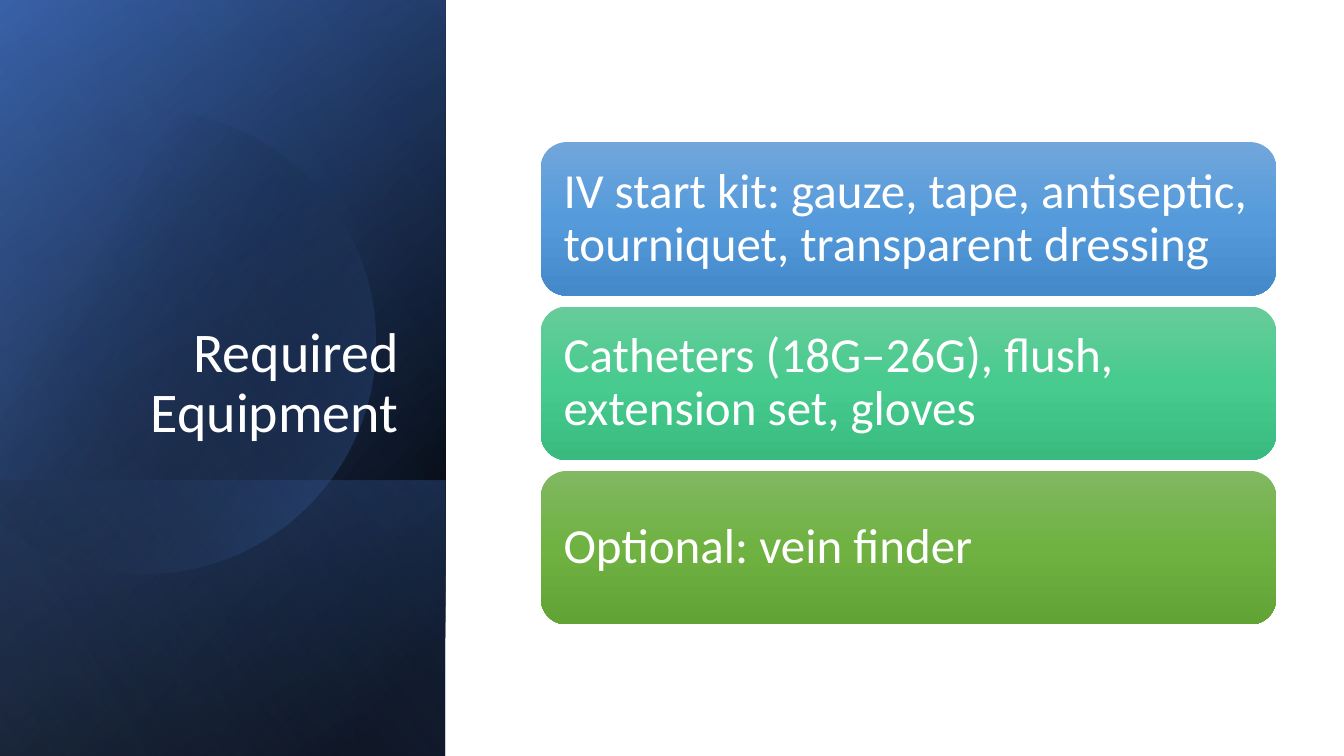
import math

import pptx
import pptx.dml.color
import pptx.enum.shapes
import pptx.enum.text
import pptx.oxml
import pptx.oxml.ns
import pptx.util

WIDTH, HEIGHT = 13.33, 7.5
FONT = "Calibri"
WHITE = "FFFFFF"
PANEL_SHARE = 0.3315  # of the slide's width

# Top share, height share, gradient angle, stops of (position, colour, opacity)
PANEL_LAYERS = [
    (0, 1, 50, [(8, "000000", 100), (100, "2F5597", 100)]),
    (0, 1, 30, [(0, "000000", 0), (99, "4472C4", 46)]),
    (0.635, 0.365, 130, [(2, "4472C4", 29), (100, "000000", 30)]),
]
DISC_STOPS = [(29, "000000", 0), (100, "4472C4", 43)]
SHEEN = (0, 1, 120, [(0, "000000", 0), (99, "8FAADC", 11)])

CARDS = [
    ("IV start kit: gauze, tape, antiseptic, tourniquet, transparent dressing",
     ["71A6DB", "559BDB", "448ACA"]),
    ("Catheters (18G–26G), flush, extension set, gloves",
     ["67CC9A", "47CB8E", "39BB7F"]),
    ("Optional: vein finder", ["81B861", "6FB242", "62A336"]),
]
CARD_LEFT, CARD_TOP = 0.4025, 0.188
CARD_WIDTH, CARD_HEIGHT, CARD_PITCH = 0.547, 0.203, 0.2175


def across(share):
    return pptx.util.Inches(WIDTH * share)


def down(share):
    return pptx.util.Inches(HEIGHT * share)


def colour(hex_string):
    return pptx.dml.color.RGBColor.from_string(hex_string)


def fill_gradient(shape, angle, stops):
    """Replace the fill with a linear gradient whose stops carry opacity."""
    stop_xml = "".join(
        f'<a:gs pos="{position * 1000}"><a:srgbClr val="{tint}">'
        f'<a:alpha val="{opacity * 1000}"/></a:srgbClr></a:gs>'
        for position, tint, opacity in stops)
    gradient = pptx.oxml.parse_xml(
        f'<a:gradFill {pptx.oxml.ns.nsdecls("a")} rotWithShape="1">'
        f'<a:gsLst>{stop_xml}</a:gsLst>'
        f'<a:lin ang="{angle * 60000}" scaled="0"/></a:gradFill>')
    shape.fill.solid()
    solid = shape.fill._xPr.find(pptx.oxml.ns.qn("a:solidFill"))
    solid.getparent().replace(solid, gradient)
    shape.line.fill.background()
    shape.shadow.inherit = False


def add_panel(page, top, height, angle, stops):
    """Add a quarter-turned, mirrored rectangle that covers the left panel."""
    long_side, short_side = down(height), across(PANEL_SHARE)
    middle_x, middle_y = short_side // 2, down(top + height / 2)
    panel = page.shapes.add_shape(
        pptx.enum.shapes.MSO_SHAPE.RECTANGLE,
        middle_x - long_side // 2, middle_y - short_side // 2,
        long_side, short_side)
    panel.rotation = 90
    panel._element.spPr.xfrm.set("flipH", "1")
    fill_gradient(panel, angle, stops)


def add_disc(page):
    """Add the circle that the slide's left edge cuts off."""
    centre_x, centre_y, radius, cut = across(0.107), down(0.452), down(0.307), 133
    reach = round(radius * math.cos(math.radians(cut)))
    rise = round(radius * math.sin(math.radians(cut)))
    left, right = centre_x + reach, centre_x + radius
    top, bottom = centre_y - radius, centre_y + radius
    builder = page.shapes.build_freeform(left, top)
    builder.add_line_segments([(right, top), (right, bottom), (left, bottom)])
    disc = builder.convert_to_shape()
    outline = disc._element.find(".//" + pptx.oxml.ns.qn("a:path"))
    arc = pptx.oxml.parse_xml(
        f'<a:path {pptx.oxml.ns.nsdecls("a")} w="{right - left}" h="{bottom - top}">'
        f'<a:moveTo><a:pt x="0" y="{radius - rise}"/></a:moveTo>'
        f'<a:arcTo wR="{radius}" hR="{radius}" stAng="{(360 - cut) * 60000}" '
        f'swAng="{2 * cut * 60000}"/><a:close/></a:path>')
    outline.getparent().replace(outline, arc)
    fill_gradient(disc, 30, DISC_STOPS)


def set_text(shape, text, size, alignment, anchor):
    frame = shape.text_frame
    frame.text = text
    frame.word_wrap = True
    frame.vertical_anchor = anchor
    para = frame.paragraphs[0]
    para.alignment = alignment
    para.line_spacing = 0.9
    para.font.name = FONT
    para.font.size = pptx.util.Pt(size)
    para.font.color.rgb = colour(WHITE)


def add_title(page, text):
    title = page.shapes.title
    title.left, title.top = across(0.048), down(0.245)
    title.width, title.height = across(0.256), down(0.35)
    set_text(title, text, 40, pptx.enum.text.PP_ALIGN.RIGHT,
             pptx.enum.text.MSO_ANCHOR.BOTTOM)
    title.text_frame.auto_size = pptx.enum.text.MSO_AUTO_SIZE.NONE
    title._element.getparent().append(title._element)  # bring to front


def add_card(page, row, text, tints):
    card = page.shapes.add_shape(
        pptx.enum.shapes.MSO_SHAPE.ROUNDED_RECTANGLE,
        across(CARD_LEFT), down(CARD_TOP + row * CARD_PITCH),
        across(CARD_WIDTH), down(CARD_HEIGHT))
    fill_gradient(card, 90, [(50 * step, tint, 100)
                             for step, tint in enumerate(tints)])
    set_text(card, text, 35, pptx.enum.text.PP_ALIGN.LEFT,
             pptx.enum.text.MSO_ANCHOR.MIDDLE)
    frame = card.text_frame
    # The rounded corners add about 0.07 inch to these insets.
    frame.margin_left = frame.margin_right = pptx.util.Inches(0.15)


def main():
    deck = pptx.Presentation()
    deck.slide_width, deck.slide_height = across(1), down(1)
    page = deck.slides.add_slide(deck.slide_layouts.get_by_name("Title Only"))
    for layer in PANEL_LAYERS:
        add_panel(page, *layer)
    add_disc(page)
    add_panel(page, *SHEEN)
    add_title(page, "Required Equipment")
    for row, (text, tints) in enumerate(CARDS):
        add_card(page, row, text, tints)
    deck.save("out.pptx")


if __name__ == "__main__":
    main()
